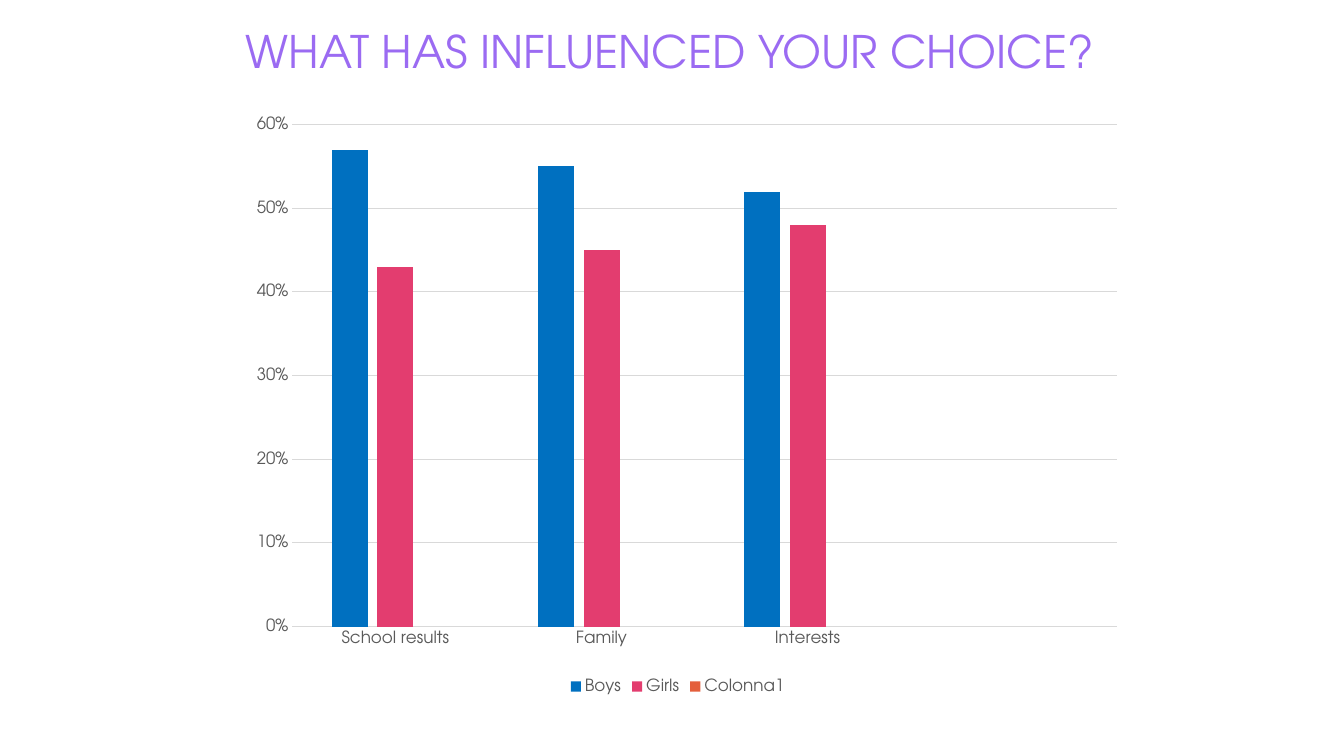
"""Build a slide with a clustered column chart of what influenced the choice."""
from dataclasses import dataclass

from lxml.etree import SubElement
from pptx import Presentation
from pptx.chart.data import CategoryChartData
from pptx.dml.color import RGBColor
from pptx.enum.chart import XL_CHART_TYPE as ChartType
from pptx.enum.chart import XL_LEGEND_POSITION as LegendPosition
from pptx.enum.chart import XL_TICK_MARK as TickMark
from pptx.enum.text import MSO_ANCHOR as Anchor
from pptx.enum.text import PP_ALIGN as Align
from pptx.oxml.ns import qn
from pptx.util import Cm, Pt


@dataclass(frozen=True)
class Theme:
    font: str = "TeX Gyre Adventor"
    title_size: int = 32
    label_size: int = 12
    line_width: float = 0.75
    title: str = "9B6BF2"
    label: str = "595959"
    line: str = "D9D9D9"
    series: tuple = ("0070C0", "E33D6F", "E45F3C")


class SlideBuilder:
    def __init__(self, slide, theme):
        self.slide = slide
        self.theme = theme

    def style_font(self, font, size, color):
        font.name = self.theme.font
        font.size = Pt(size)
        font.bold = False
        font.color.rgb = RGBColor.from_string(color)

    def style_line(self, line):
        line.color.rgb = RGBColor.from_string(self.theme.line)
        line.width = Pt(self.theme.line_width)

    def add_title(self, text, left, top, width, height):
        title = self.slide.shapes.title
        title.left, title.top = Cm(left), Cm(top)
        title.width, title.height = Cm(width), Cm(height)
        frame = title.text_frame
        frame.text = text
        frame.word_wrap = False
        frame.vertical_anchor = Anchor.TOP
        paragraph = frame.paragraphs[0]
        paragraph.alignment = Align.CENTER
        self.style_font(paragraph.font, self.theme.title_size, self.theme.title)

    def add_column_chart(self, categories, series, left, top, width, height):
        data = CategoryChartData(number_format="0%")
        data.categories = categories
        for name, values in series.items():
            data.add_series(name, values)
        chart = self.slide.shapes.add_chart(
            ChartType.COLUMN_CLUSTERED, Cm(left), Cm(top), Cm(width), Cm(height), data
        ).chart
        self.style_font(chart.font, self.theme.label_size, self.theme.label)
        chart.has_title = False
        chart.has_legend = True
        chart.legend.position = LegendPosition.BOTTOM
        chart.legend.include_in_layout = False
        plot = chart.plots[0]
        plot.vary_by_categories = False
        plot.gap_width, plot.overlap = 219, -27
        for column, color in zip(plot.series, self.theme.series):
            column.format.fill.solid()
            column.format.fill.fore_color.rgb = RGBColor.from_string(color)
        self.style_axes(chart)
        return chart

    def style_axes(self, chart):
        for axis in (chart.category_axis, chart.value_axis):
            axis.major_tick_mark = axis.minor_tick_mark = TickMark.NONE
        self.style_line(chart.category_axis.format.line)
        values = chart.value_axis
        values.minimum_scale, values.maximum_scale, values.major_unit = 0, 0.6, 0.1
        values.tick_labels.number_format = "0%"
        values.tick_labels.number_format_is_linked = False
        values.format.line.fill.background()
        self.style_line(values.major_gridlines.format.line)

    def place_plot(self, chart, **fractions):
        area = chart.plots[0]._element.getparent()
        for old_layout in area.findall(qn("c:layout")):
            area.remove(old_layout)
        layout = SubElement(area, qn("c:layout"))
        area.insert(0, layout)
        manual = SubElement(layout, qn("c:manualLayout"))
        settings = {"layoutTarget": "inner", "xMode": "edge", "yMode": "edge", **fractions}
        for name, value in settings.items():
            SubElement(manual, qn(f"c:{name}")).set("val", str(value))


def main():
    presentation = Presentation()
    presentation.slide_width, presentation.slide_height = Cm(33.87), Cm(19.05)
    slide = presentation.slides.add_slide(presentation.slide_layouts[5])
    builder = SlideBuilder(slide, Theme())
    builder.add_title("WHAT HAS INFLUENCED YOUR CHOICE?", 5.79, 0.46, 22.2, 1.63)
    chart = builder.add_column_chart(
        ["School results", "Family", "Interests", ""],
        {
            "Boys": (0.57, 0.55, 0.52, None),
            "Girls": (0.43, 0.45, 0.48, None),
            "Colonna1": (None,) * 4,
        },
        5.79, 2.54, 22.58, 15.06,
    )
    builder.place_plot(chart, x=0.07, y=0.04, w=0.92, h=0.84)
    presentation.save("out.pptx")


if __name__ == "__main__":
    main()
